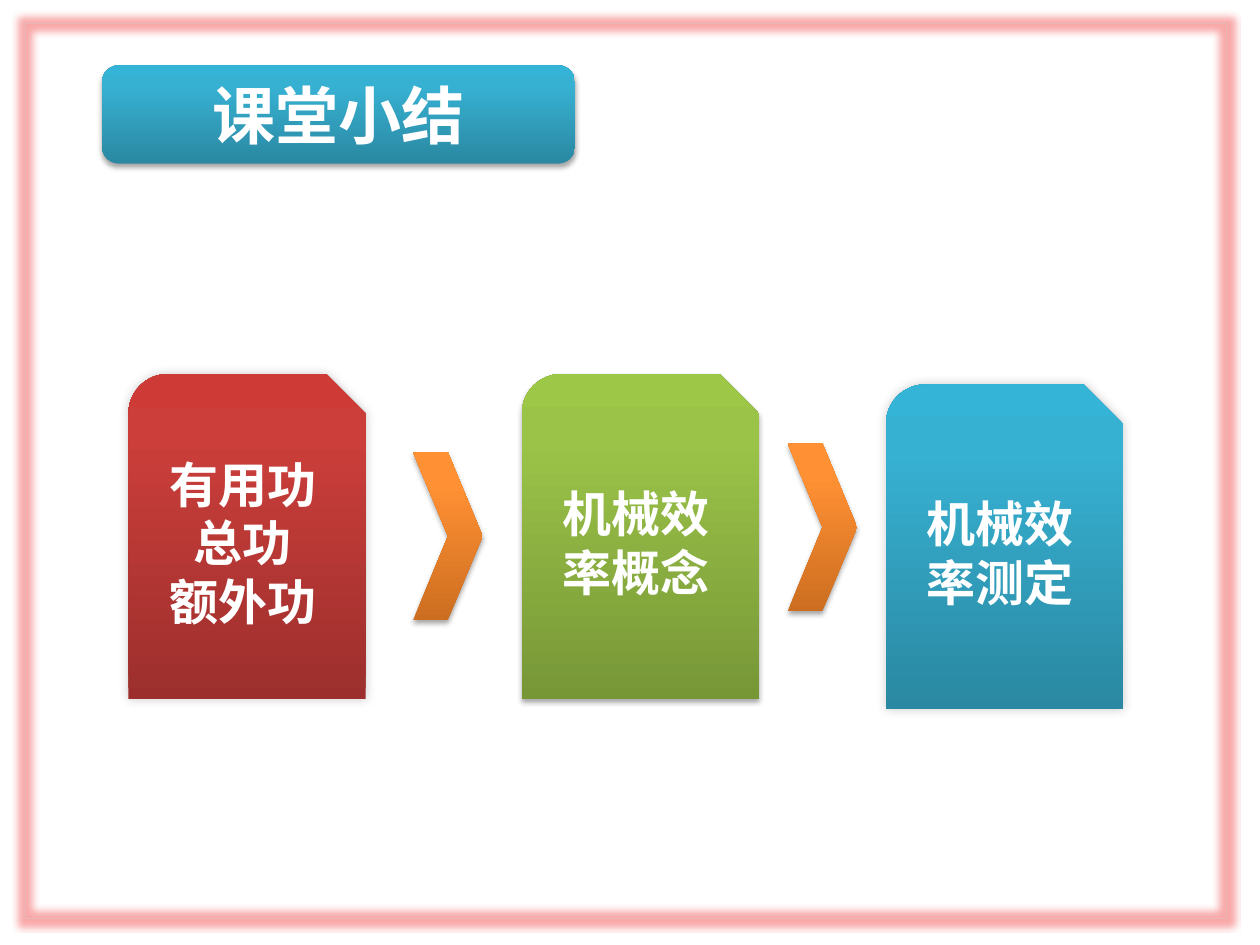
from typing import NamedTuple

from lxml.etree import SubElement as Sub
from pptx import Presentation
from pptx.dml.color import RGBColor as RGB
from pptx.enum.shapes import MSO_SHAPE as Kind
from pptx.enum.text import MSO_ANCHOR as Anchor, PP_ALIGN as Align
from pptx.oxml.ns import qn
from pptx.util import Cm, Pt

FONT = "Noto Sans CJK SC"
WHITE = RGB(0xFF, 0xFF, 0xFF)
PINK = RGB(0xE6, 0xB9, 0xB8)
GLOW = RGB(0xF0, 0x25, 0x25)
BLACK = RGB(0, 0, 0)

# Gradients run from the bottom edge to the top edge
STOPS = (0, 80, 100)
BLUE = (RGB(0x2A, 0x88, 0xA2), RGB(0x37, 0xB1, 0xD2), RGB(0x34, 0xB4, 0xD6))
RED = (RGB(0x9C, 0x2F, 0x2D), RGB(0xCB, 0x3E, 0x3A), RGB(0xCE, 0x3B, 0x37))
GREEN = (RGB(0x77, 0x97, 0x37), RGB(0x9B, 0xC3, 0x48), RGB(0x9D, 0xC7, 0x46))
ORANGE = (RGB(0xCC, 0x6E, 0x20), RGB(0xFF, 0x90, 0x34), RGB(0xFF, 0x91, 0x36))


class Shade(NamedTuple):
    alpha: int
    blur: float
    dist: float
    angle: int


DROP = Shade(35, 3.1, 1.8, 90)
HALO = Shade(20, 6, 0, 315)
HALO_LEFT = Shade(20, 6, 0, 225)


class Card(NamedTuple):
    left: float
    top: float
    tint: tuple
    shade: Shade
    text: str


class Arrow(NamedTuple):
    left: float
    top: float


CARDS = [
    Card(2.59, 7.54, RED, HALO, "有用功\n总功\n额外功"),
    Card(10.52, 7.54, GREEN, DROP, "机械效率概念"),
    Card(17.86, 7.75, BLUE, HALO_LEFT, "机械效率测定"),
]
ARROWS = [Arrow(8.33, 9.12), Arrow(15.88, 8.94)]


def add_color(node, color: RGB, alpha: int = 100) -> None:
    tag = Sub(node, qn("a:srgbClr"), val=str(color))
    if alpha < 100:
        Sub(tag, qn("a:alpha"), val=str(alpha * 1000))


def add_box(slide, kind, left: float, top: float, width: float, height: float):
    box = slide.shapes.add_shape(kind, Cm(left), Cm(top), Cm(width), Cm(height))
    box.shadow.inherit = False
    box.fill.background()
    return box


def add_block(slide, kind, left: float, top: float, width: float,
              height: float, tint: tuple, shade: Shade):
    """Borderless shape with a three-stop gradient and a soft shadow."""
    box = add_box(slide, kind, left, top, width, height)
    box.line.fill.background()
    box.fill.gradient()
    grad = box._element.spPr.find(qn("a:gradFill"))
    for child in list(grad):
        grad.remove(child)
    stops = Sub(grad, qn("a:gsLst"))
    for pos, color in zip(STOPS, tint):
        add_color(Sub(stops, qn("a:gs"), pos=str(pos * 1000)), color)
    Sub(grad, qn("a:lin"), ang=str(270 * 60000), scaled="0")
    drop = Sub(box._element.spPr.find(qn("a:effectLst")), qn("a:outerShdw"),
               blurRad=str(Pt(shade.blur)), dist=str(Pt(shade.dist)),
               dir=str(shade.angle * 60000), rotWithShape="0")
    add_color(drop, BLACK, shade.alpha)
    return box


def write(box, text: str, *, size: int, color: RGB = WHITE,
          bold: bool = True, align=Align.CENTER) -> None:
    frame = box.text_frame
    frame.word_wrap = True
    frame.vertical_anchor = Anchor.MIDDLE
    frame.text = text
    for para in frame.paragraphs:
        para.alignment = align
        for run in para.runs:
            font = run.font
            font.size, font.bold, font.name = Pt(size), bold, FONT
            font.color.rgb = color
            Sub(run._r.get_or_add_rPr(), qn("a:ea"), typeface=FONT)


def add_frame(slide) -> None:
    box = add_box(slide, Kind.FLOWCHART_PROCESS, 0.51, 0.48, 24.21, 18.03)
    box.line.color.rgb = PINK
    box.line.width = Pt(0.5)
    glow = Sub(box._element.spPr.find(qn("a:effectLst")), qn("a:glow"),
               rad=str(Pt(8)))
    add_color(glow, GLOW, 40)


def main() -> None:
    deck = Presentation()
    deck.slide_width, deck.slide_height = Cm(25.4), Cm(19.05)
    slide = deck.slides.add_slide(deck.slide_layouts[6])

    # Title
    title = add_block(slide, Kind.ROUNDED_RECTANGLE, 2.06, 1.32, 9.53, 1.98,
                      BLUE, DROP)
    write(title, "课堂小结", size=36)

    # Topic cards
    for card in CARDS:
        box = add_block(slide, Kind.SNIP_ROUND_RECTANGLE, card.left, card.top,
                        4.78, 6.55, card.tint, card.shade)
        write(box, card.text, size=28)

    # Chevrons between the cards
    for arrow in ARROWS:
        add_block(slide, Kind.CHEVRON, arrow.left, arrow.top, 1.4, 3.38,
                  ORANGE, DROP)

    # Glowing page border
    add_frame(slide)
    deck.save("out.pptx")


if __name__ == "__main__":
    main()
